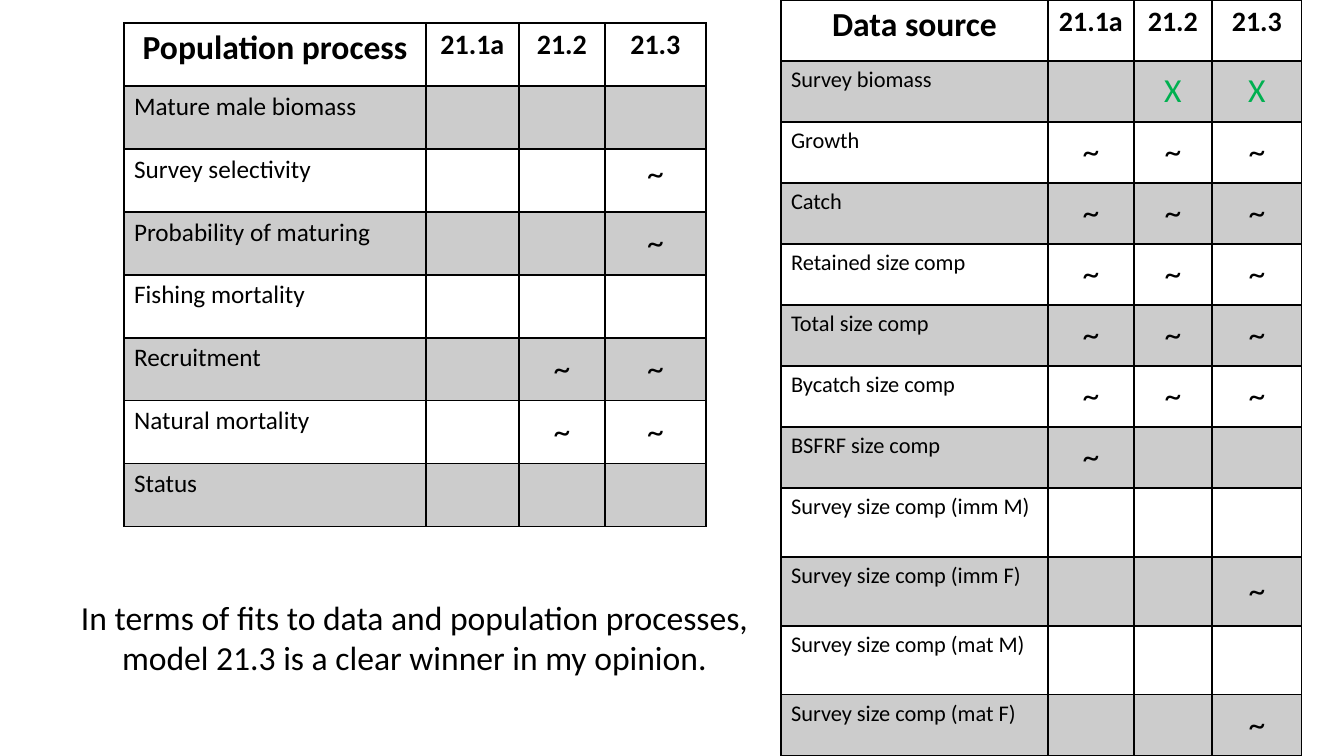
from lxml import etree
from pptx import Presentation
from pptx import util as u
from pptx.dml.color import RGBColor
from pptx.enum import text
from pptx.oxml import ns

BLACK, GREEN = "000000", "00B050"
MARK_COLOURS = {"~": BLACK, "X": GREEN}
MODELS = ["21.1a", "21.2", "21.3"]


def px(n):
    return u.Emu(round(n * 914400 / 100.8))


def colour(hex_string):
    return RGBColor.from_string(hex_string)


class Deck:
    font = "Calibri"
    band_alpha = 20

    def __init__(self, width, height):
        self.prs = Presentation()
        self.prs.slide_width, self.prs.slide_height = px(width), px(height)
        self.slide = self.prs.slides.add_slide(self.prs.slide_layouts[6])

    def add_words(self, frame, words, size, hue=BLACK, bold=False, centred=True):
        paragraph = frame.paragraphs[0]
        paragraph.alignment = text.PP_ALIGN.CENTER if centred else text.PP_ALIGN.LEFT
        run = paragraph.add_run()
        run.text = words
        run.font.name, run.font.size, run.font.bold = self.font, u.Pt(size), bold
        run.font.color.rgb = colour(hue)

    def shade(self, cell, banded):
        if not banded:
            cell.fill.background()
            return
        cell.fill.solid()
        cell.fill.fore_color.rgb = colour(BLACK)
        tint = cell._tc.tcPr.find(".//" + ns.qn("a:srgbClr"))
        etree.SubElement(tint, ns.qn("a:alpha"), val=str(self.band_alpha * 1000))

    def outline(self, cell, top, bottom):
        # Borders come before the fill in the cell properties
        properties = cell._tc.get_or_add_tcPr()
        for i, (side, points) in enumerate(zip("LRTB", (1, 1, top, bottom))):
            line = etree.Element(ns.qn("a:ln" + side), w=str(int(u.Pt(points))))
            solid = etree.SubElement(line, ns.qn("a:solidFill"))
            etree.SubElement(solid, ns.qn("a:srgbClr"), val=BLACK)
            properties.insert(i, line)

    def score_table(self, left, top, widths, heights, heading, label_size, scores, top_marks=()):
        """Each score is a row label and one mark per model; a space is no mark."""
        table = self.slide.shapes.add_table(
            len(heights), len(widths), px(left), px(top), px(sum(widths)), px(sum(heights))).table
        table.first_row = table.horz_banding = False
        for column, width in zip(table.columns, widths):
            column.width = px(width)
        for row, height in zip(table.rows, heights):
            row.height = px(height)

        rows = [[heading, *MODELS]] + [[label, *marks] for label, marks in scores]
        for r, row in enumerate(rows):
            for c, words in enumerate(row):
                cell = table.cell(r, c)
                self.shade(cell, r % 2 == 1)
                self.outline(cell, 2 if r == 1 else 1, 2 if r == 0 else 1)
                if r == 0:
                    self.add_words(cell.text_frame, words, 20 if c else 24, bold=True)
                elif c == 0:
                    self.add_words(cell.text_frame, words, label_size, centred=False)
                elif words != " ":
                    self.add_words(cell.text_frame, words, 24, MARK_COLOURS[words])
                    if row[0] not in top_marks:
                        cell.vertical_anchor = text.MSO_ANCHOR.MIDDLE

    def caption(self, left, top, width, height, words):
        frame = self.slide.shapes.add_textbox(px(left), px(top), px(width), px(height)).text_frame
        frame.word_wrap = True
        frame.auto_size = text.MSO_AUTO_SIZE.SHAPE_TO_FIT_TEXT
        self.add_words(frame, words, 24)


def main():
    deck = Deck(1344, 756)

    # Population processes
    deck.score_table(124, 23, [302, 93, 86, 101], [63] * 8, "Population process", 18, [
        ("Mature male biomass", "   "),
        ("Survey selectivity", "  ~"),
        ("Probability of maturing", "  ~"),
        ("Fishing mortality", "   "),
        ("Recruitment", " ~~"),
        ("Natural mortality", " ~~"),
        ("Status", "   "),
    ], top_marks=["Survey selectivity"])

    # Data sources
    deck.score_table(781, 0, [267, 86, 78, 90], [61] * 8 + [69] * 3 + [61], "Data source", 16, [
        ("Survey biomass", " XX"),
        ("Growth", "~~~"),
        ("Catch", "~~~"),
        ("Retained size comp", "~~~"),
        ("Total size comp", "~~~"),
        ("Bycatch size comp", "~~~"),
        ("BSFRF size comp", "~  "),
        ("Survey size comp (imm M)", "   "),
        ("Survey size comp (imm F)", "  ~"),
        ("Survey size comp (mat M)", "   "),
        ("Survey size comp (mat F)", "  ~"),
    ])

    # Conclusion
    deck.caption(59, 592, 711, 92, "In terms of fits to data and population processes, "
                                   "model 21.3 is a clear winner in my opinion.")
    deck.prs.save("out.pptx")


if __name__ == "__main__":
    main()
